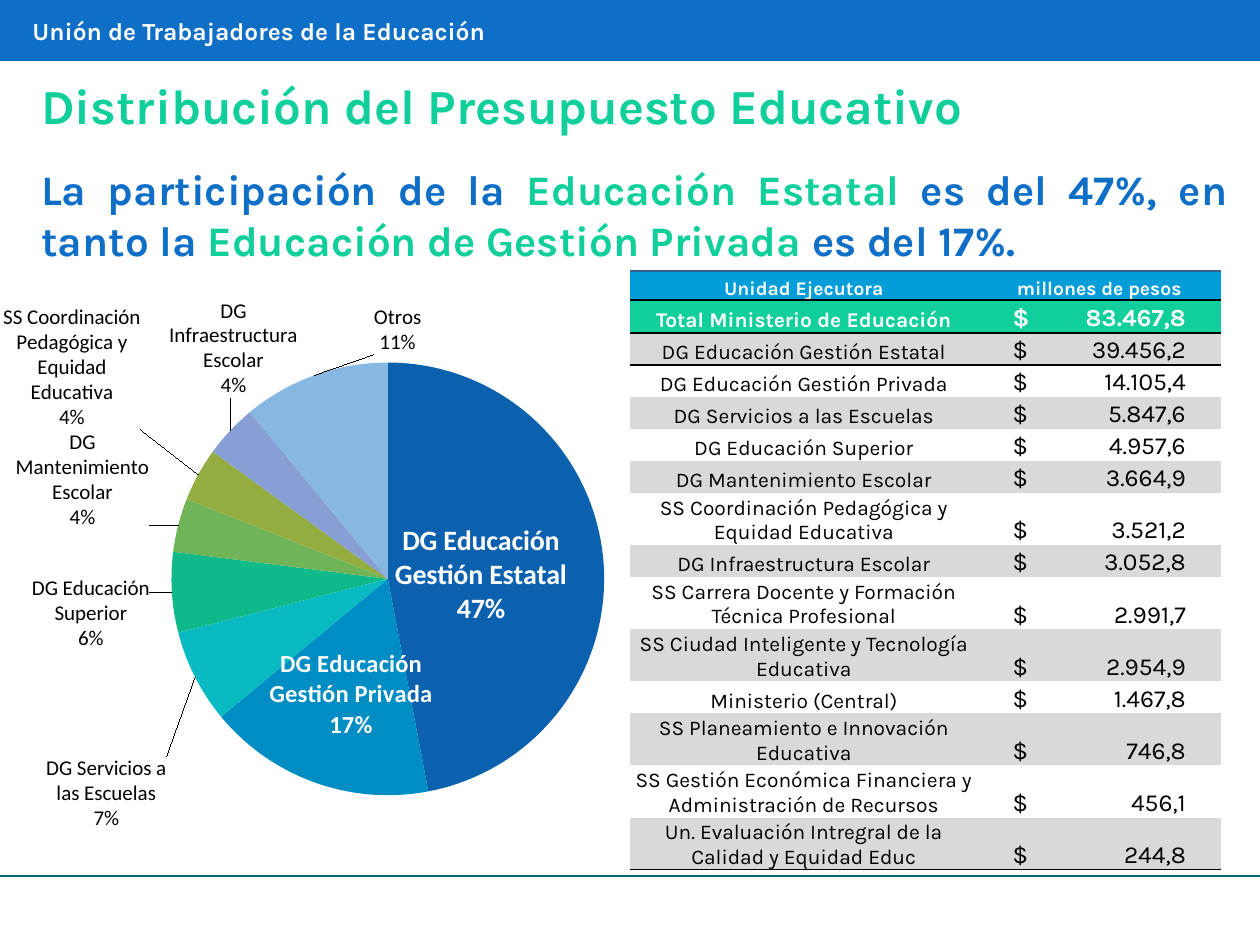
from dataclasses import dataclass
from typing import NamedTuple

from lxml import etree
from pptx import Presentation
from pptx.chart.data import CategoryChartData
from pptx.dml.color import RGBColor
from pptx.enum.chart import XL_CHART_TYPE, XL_LABEL_POSITION
from pptx.enum.shapes import MSO_CONNECTOR, MSO_SHAPE
from pptx.enum.text import MSO_ANCHOR, MSO_AUTO_SIZE, PP_ALIGN
from pptx.oxml import parse_xml
from pptx.oxml.ns import nsdecls, qn
from pptx.util import Pt

PIE = XL_CHART_TYPE.PIE
MID, OUT = XL_LABEL_POSITION.CENTER, XL_LABEL_POSITION.OUTSIDE_END
LINE, RECT = MSO_CONNECTOR.STRAIGHT, MSO_SHAPE.RECTANGLE
BOTTOM, GROW = MSO_ANCHOR.BOTTOM, MSO_AUTO_SIZE.SHAPE_TO_FIT_TEXT
LEFT, CENTER, JUSTIFY = PP_ALIGN.LEFT, PP_ALIGN.CENTER, PP_ALIGN.JUSTIFY
PLAIN_GRID = "{2D5ABB26-0587-4C30-8999-92F81FD0307C}"


@dataclass(frozen=True)
class Theme:
    font: str = "Karla"
    chart_font: str = "Calibri"
    blue: str = "0F6FC6"
    green: str = "10CF9B"
    sky: str = "009DD9"
    teal: str = "04617B"
    edge: str = "366092"
    gray: str = "D9D9D9"
    black: str = "000000"
    white: str = "FFFFFF"
    title: float = 28
    lead: float = 24
    brand: float = 14
    head: float = 11
    name: float = 12
    sum: float = 14
    label: float = 12


class Box(NamedTuple):
    x: float
    y: float
    w: float
    h: float


class Span(NamedTuple):
    text: str
    color: str


class Slice(NamedTuple):
    name: str
    share: int
    color: str
    dx: float = 0
    dy: float = 0
    size: float = 0  # a size of its own puts the label inside, bold and white


class Entry(NamedTuple):
    name: str
    sum: str
    lines: int = 1


T = Theme()

SLICES = [
    Slice("DG Educación Gestión Estatal", 47, "0C61AF", -0.02, 0.01, 16),
    Slice("DG Educación Gestión Privada", 17, "008DC3", 0, 0.02, 14),
    Slice("DG Servicios a las Escuelas", 7, "09BAC3", -0.03, 0.11),
    Slice("DG Educación Superior", 6, "0FB98A", -0.02, 0.03),
    Slice("DG Mantenimiento Escolar", 4, "6FB558", -0.03, 0.01),
    Slice("SS Coordinación Pedagógica y Equidad Educativa", 4, "93AD41", -0.07, -0.06),
    Slice("DG Infraestructura Escolar", 4, "889FD6", 0.1, -0.04),
    Slice("Otros", 11, "87B8E1", 0.15, -0.02),
]

ENTRIES = [
    Entry("DG Educación Gestión Estatal", "39.456,2"),
    Entry("DG Educación Gestión Privada", "14.105,4"),
    Entry("DG Servicios a las Escuelas", "5.847,6"),
    Entry("DG Educación Superior", "4.957,6"),
    Entry("DG Mantenimiento Escolar", "3.664,9"),
    Entry("SS Coordinación Pedagógica y Equidad Educativa", "3.521,2", 2),
    Entry("DG Infraestructura Escolar", "3.052,8"),
    Entry("SS Carrera Docente y Formación Técnica Profesional", "2.991,7", 2),
    Entry("SS Ciudad Inteligente y Tecnología Educativa", "2.954,9", 2),
    Entry("Ministerio (Central)", "1.467,8"),
    Entry("SS Planeamiento e Innovación Educativa", "746,8", 2),
    Entry("SS Gestión Económica Financiera y Administración de Recursos", "456,1", 2),
    Entry("Un. Evaluación Intregral de la Calidad y Equidad Educ", "244,8", 2),
]


def rgb(color: str) -> RGBColor:
    return RGBColor.from_string(color)


def place(box: Box) -> list:
    return [Pt(v) for v in box]


def add_run(para, text: str, size: float, color: str, bold: bool = True) -> None:
    run = para.add_run()
    run.text = text
    font = run.font
    font.name, font.size, font.bold = T.font, Pt(size), bold
    font.color.rgb = rgb(color)


def add_text(slide, box: Box, spans: list[Span], size: float, align=LEFT, after: float = 0) -> None:
    frame = slide.shapes.add_textbox(*place(box)).text_frame
    frame.word_wrap, frame.auto_size = True, GROW
    para = frame.paragraphs[0]
    para.alignment, para.space_after = align, Pt(after)
    for span in spans:
        add_run(para, span.text, size, span.color)


def add_band(slide, box: Box) -> None:
    band = slide.shapes.add_shape(RECT, *place(box))
    band.shadow.inherit = False
    band.fill.solid()
    band.fill.fore_color.rgb = band.line.color.rgb = rgb(T.blue)
    band.line.width = Pt(2)


def add_rule(slide, y: float, width: float) -> None:
    rule = slide.shapes.add_connector(LINE, 0, Pt(y), Pt(width), Pt(y))
    rule.line.color.rgb, rule.line.width = rgb(T.teal), Pt(1.5)
    etree.SubElement(rule._element.spPr, qn("a:effectLst"))


def layout(inner: str):
    return parse_xml(f"<c:layout {nsdecls('c')}><c:manualLayout>{inner}</c:manualLayout></c:layout>")


def set_label(node, part: Slice) -> None:
    """Show name and share on two lines, moved from the default place."""
    for tag, val in (("showVal", "0"), ("showCatName", "1"), ("showPercent", "1")):
        node.find(qn(f"c:{tag}")).set("val", val)
    node.insert(1, layout(f'<c:x val="{part.dx}"/><c:y val="{part.dy}"/>'))
    etree.SubElement(node, qn("c:separator")).text = "\n"


def add_pie(slide, box: Box, parts: list[Slice]) -> None:
    data = CategoryChartData()
    data.categories = [p.name for p in parts]
    data.add_series("Series 1", [p.share for p in parts])
    chart = slide.shapes.add_chart(PIE, *place(box), data).chart
    chart.has_title = chart.has_legend = False
    chart.font.name, chart.font.size = T.chart_font, Pt(T.label)
    chart.font.color.rgb = rgb(T.black)
    chart.plots[0].vary_by_categories = True
    series = chart.plots[0].series[0]
    labels = series.data_labels
    labels.show_value = False
    labels.show_percentage = labels.show_category_name = True
    for i, part in enumerate(parts):
        point = series.points[i]
        point.format.fill.solid()
        point.format.fill.fore_color.rgb = rgb(part.color)
        point.format.line.fill.background()
        label = point.data_label
        label.font.name, label.font.size = T.chart_font, Pt(part.size or T.label)
        label.font.bold = bool(part.size)
        label.font.color.rgb = rgb(T.white if part.size else T.black)
        label.position = MID if part.size else OUT
    for node, part in zip(chart._chartSpace.xpath(".//c:dLbl"), parts):
        set_label(node, part)
    area = chart._chartSpace.xpath(".//c:plotArea")[0]
    for old in area.findall(qn("c:layout")):
        area.remove(old)
    area.insert(0, layout(
        '<c:layoutTarget val="inner"/><c:xMode val="edge"/><c:yMode val="edge"/>'
        '<c:x val="0.235"/><c:y val="0.131"/><c:w val="0.593"/><c:h val="0.628"/>'))


def set_edge(cell, side: str, color: str) -> None:
    cell._tc.get_or_add_tcPr().insert(0, parse_xml(
        f'<a:ln{side} {nsdecls("a")} w="{Pt(1)}"><a:solidFill><a:srgbClr val="{color}"/>'
        f"</a:solidFill></a:ln{side}>"))


def fill_cell(cell, text: str, size: float, ink: str, bold: bool, fill: str) -> None:
    """Write a cell; a tab in the text lines the amount up on the right."""
    cell.vertical_anchor = BOTTOM
    cell.margin_left = Pt(20 if "\t" in text else 0.7)
    cell.margin_right = cell.margin_top = Pt(0.7)
    cell.margin_bottom = 0
    if fill:
        cell.fill.solid()
        cell.fill.fore_color.rgb = rgb(fill)
    else:
        cell.fill.background()
    para = cell.text_frame.paragraphs[0]
    para.alignment = CENTER
    if "\t" in text:
        para.alignment = LEFT
        para._p.get_or_add_pPr().append(parse_xml(
            f'<a:tabLst {nsdecls("a")}><a:tab pos="{Pt(99)}" algn="r"/></a:tabLst>'))
    add_run(para, text, size, ink, bold)


def add_grid(slide, box: Box, items: list[Entry]) -> None:
    rows = [Entry("Unidad Ejecutora", "millones de pesos"),
            Entry("Total Ministerio de Educación", "83.467,8"), *items]
    table = slide.shapes.add_table(len(rows), 2, *place(box)).table
    table.first_row = table.horz_banding = False
    table._tbl.tblPr.find(qn("a:tableStyleId")).text = PLAIN_GRID
    table.columns[0].width, table.columns[1].width = Pt(198.7), Pt(139)
    tops = {0: T.edge, 1: T.black, 2: T.black}
    ends = {0, 1, len(rows) - 1}
    for i, row in enumerate(rows):
        table.rows[i].height = Pt({0: 16.6, 1: 18.9}.get(i, 29.8 if row.lines == 2 else 18.3))
        fill = {0: T.sky, 1: T.green}.get(i, "" if i % 2 else T.gray)
        bold = i < 2
        ink = T.white if bold else T.black
        texts = ((row.name, T.name if i else T.head),
                 (f"$\t{row.sum}" if i else row.sum, T.sum if i else T.head))
        for j, (text, size) in enumerate(texts):
            cell = table.cell(i, j)
            fill_cell(cell, text, size, ink, bold, fill)
            if i in ends:
                set_edge(cell, "B", T.black)
            if i in tops:
                set_edge(cell, "T", tops[i])


def main() -> None:
    deck = Presentation()
    deck.slide_width, deck.slide_height = Pt(720), Pt(540)
    slide = deck.slides.add_slide(deck.slide_layouts[6])
    add_text(slide, Box(16.5, 90, 692, 65.5), [
        Span("La participación de la ", T.blue), Span("Educación Estatal ", T.green),
        Span("es del 47%, en tanto la ", T.blue),
        Span("Educación de Gestión Privada ", T.green), Span("es del 17%.", T.blue),
    ], T.lead, JUSTIFY)
    add_rule(slide, 500.5, 720)
    add_band(slide, Box(0, 0, 720, 34))
    add_text(slide, Box(11.5, 5.8, 659.5, 24.5),
             [Span("Unión de Trabajadores de la Educación", T.white)], T.brand)
    add_text(slide, Box(16.5, 39.6, 680, 41),
             [Span("Distribución del Presupuesto Educativo", T.green)], T.title, after=12)
    add_pie(slide, Box(0, 155.5, 417, 394), SLICES)
    add_grid(slide, Box(360, 154.8, 337.7, 342.5), ENTRIES)
    deck.save("out.pptx")


if __name__ == "__main__":
    main()
